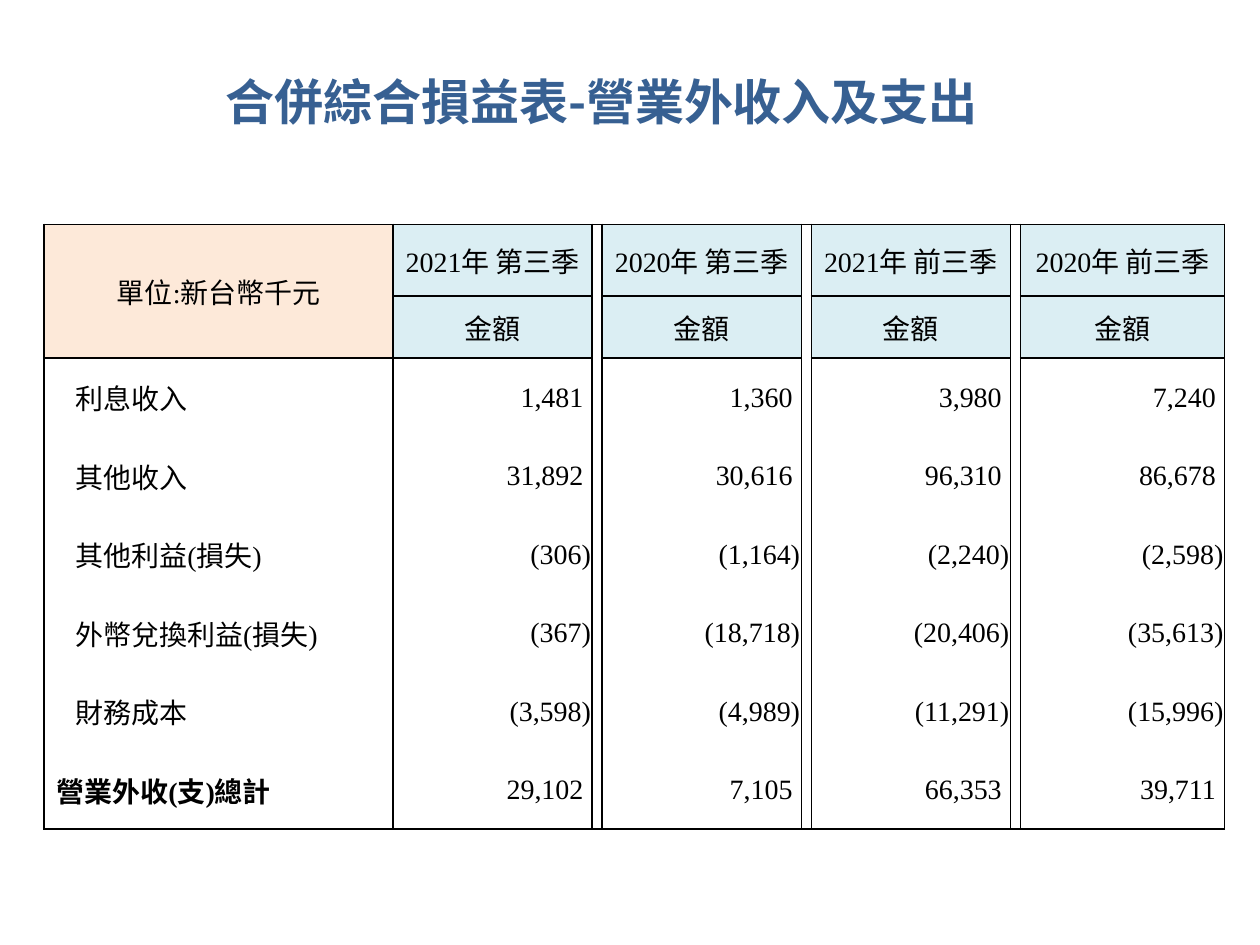
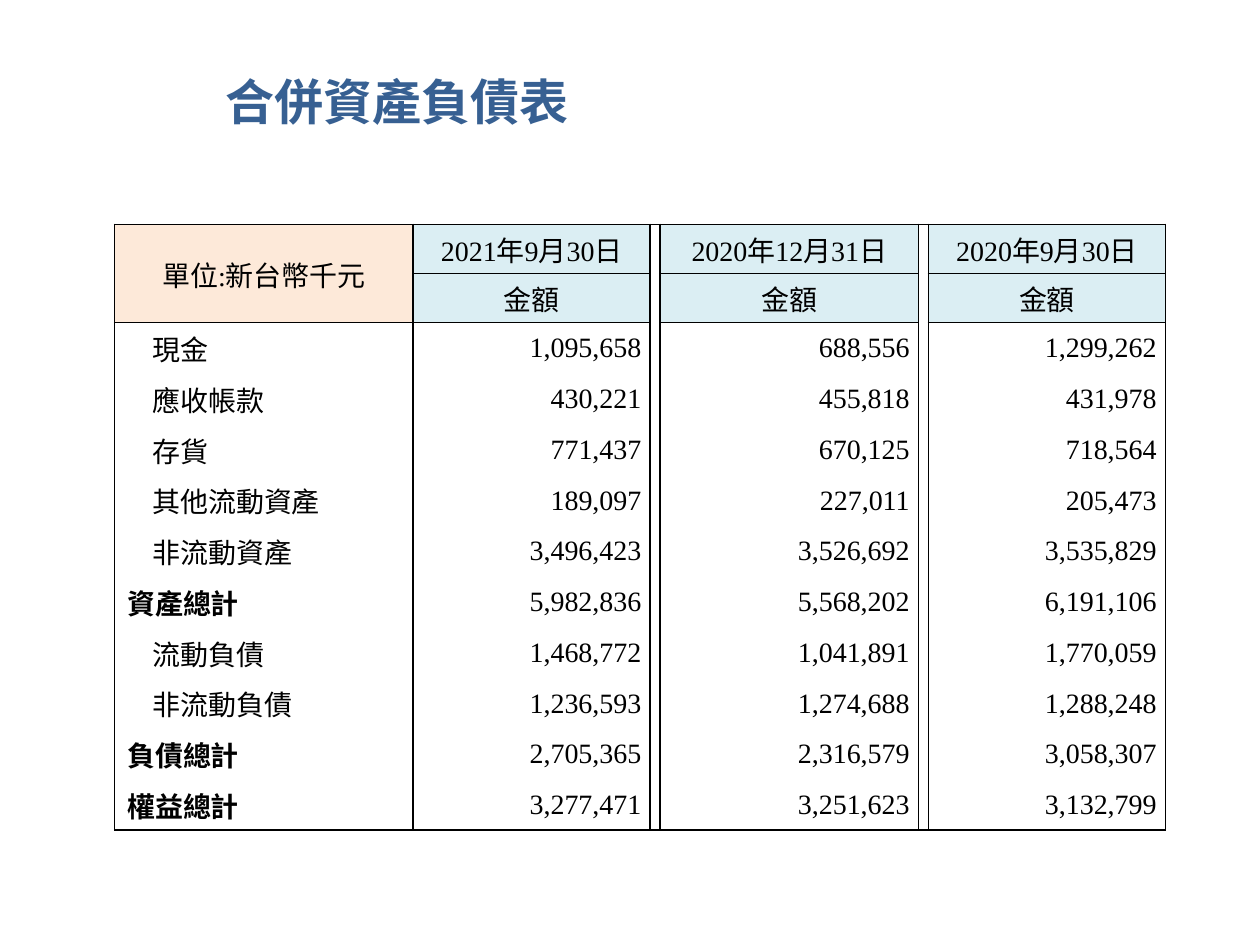
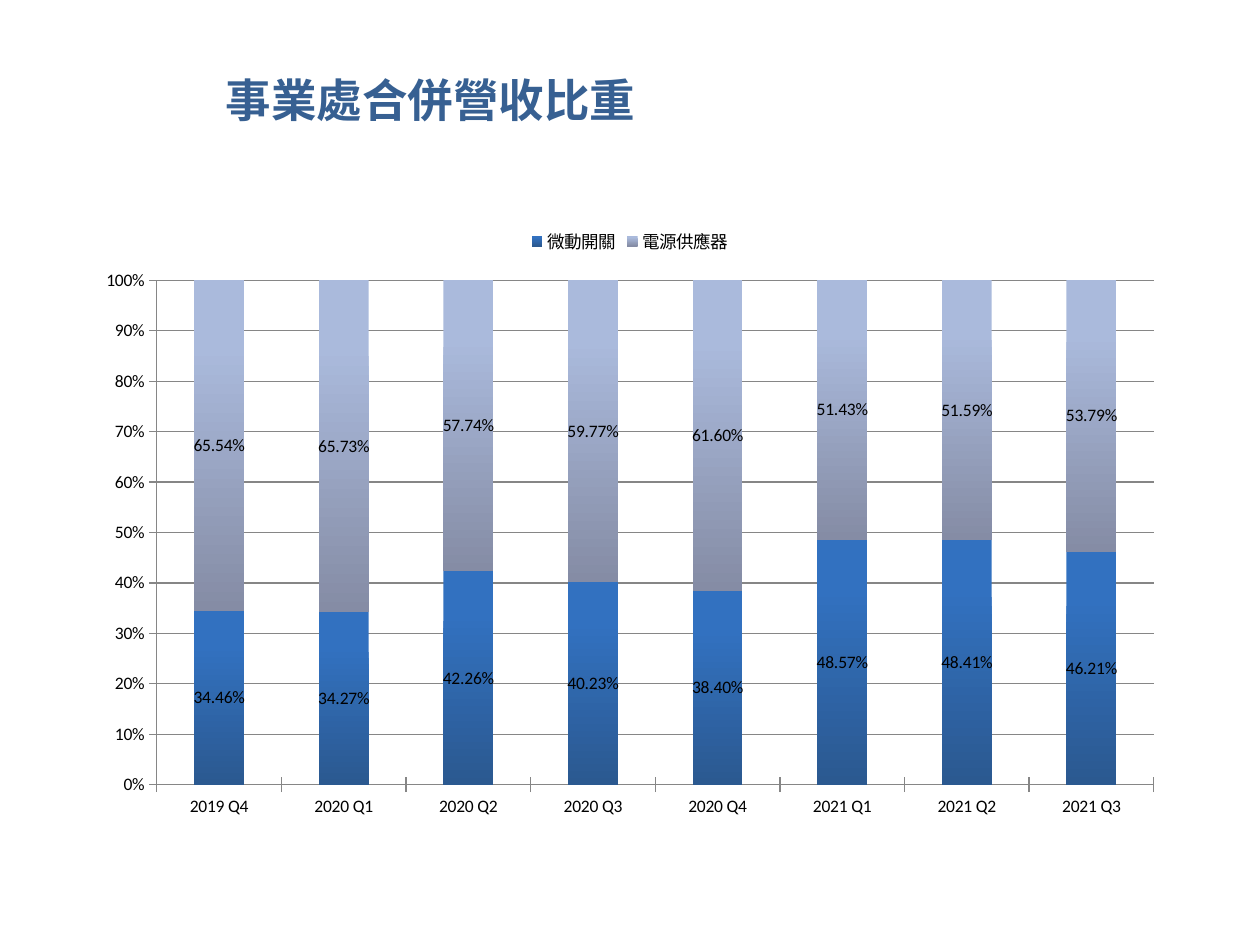
from lxml.etree import SubElement
from pptx import Presentation
from pptx.chart.data import CategoryChartData
from pptx.dml.color import RGBColor
from pptx.enum.chart import XL_CHART_TYPE, XL_LEGEND_POSITION, XL_TICK_MARK
from pptx.enum.text import MSO_ANCHOR, MSO_AUTO_SIZE, PP_ALIGN
from pptx.oxml.ns import qn
from pptx.util import Inches, Pt

TITLE_BLUE = RGBColor(0x37, 0x60, 0x92)
BLACK = RGBColor(0, 0, 0)
GRID_GRAY = RGBColor(0x86, 0x86, 0x86)
UNIT_FILL = RGBColor(0xFD, 0xE9, 0xD9)
HEADER_FILL = RGBColor(0xDB, 0xEE, 0xF3)
SERIES_GRADIENTS = [
    (RGBColor(0x32, 0x71, 0xC0), RGBColor(0x2B, 0x59, 0x90)),
    (RGBColor(0xAA, 0xBA, 0xDC), RGBColor(0x85, 0x8C, 0xA5)),
]

SERIF = "Times New Roman"
SANS = "Noto Sans CJK SC"
CHART_FONT = "Calibri"

UNIT = "單位:新台幣千元"
AMOUNT = "金額"
GAP_WIDTH = 0.08
HEADER_ROWS = 2
CELL_INSET = 0.01
TOTAL_INDENT = 0.1
DIGIT_INSET = 0.07  # lines digits up with those inside closing brackets

INCOME = {
    "place": (0.35, 1.78, 4.8),
    "label_width": 2.77,
    "value_widths": [1.58, 1.58, 1.58, 1.62],
    "header_heights": [0.57, 0.49],
    "indent": 0.25,
    "periods": ["2021年 第三季", "2020年 第三季", "2021年 前三季", "2020年 前三季"],
    "rows": [
        ("利息收入", "1,481", "1,360", "3,980", "7,240"),
        ("其他收入", "31,892", "30,616", "96,310", "86,678"),
        ("其他利益(損失)", "(306)", "(1,164)", "(2,240)", "(2,598)"),
        ("外幣兌換利益(損失)", "(367)", "(18,718)", "(20,406)", "(35,613)"),
        ("財務成本", "(3,598)", "(4,989)", "(11,291)", "(15,996)"),
        ("營業外收(支)總計", "29,102", "7,105", "66,353", "39,711"),
    ],
}
BALANCE = {
    "place": (0.91, 1.78, 4.81),
    "label_width": 2.37,
    "value_widths": [1.88, 2.05, 1.88],
    "header_heights": [0.39, 0.39],
    "indent": 0.3,
    "periods": ["2021年9月30日", "2020年12月31日", "2020年9月30日"],
    "rows": [
        ("現金", "1,095,658", "688,556", "1,299,262"),
        ("應收帳款", "430,221", "455,818", "431,978"),
        ("存貨", "771,437", "670,125", "718,564"),
        ("其他流動資產", "189,097", "227,011", "205,473"),
        ("非流動資產", "3,496,423", "3,526,692", "3,535,829"),
        ("資產總計", "5,982,836", "5,568,202", "6,191,106"),
        ("流動負債", "1,468,772", "1,041,891", "1,770,059"),
        ("非流動負債", "1,236,593", "1,274,688", "1,288,248"),
        ("負債總計", "2,705,365", "2,316,579", "3,058,307"),
        ("權益總計", "3,277,471", "3,251,623", "3,132,799"),
    ],
}
QUARTERS = ["2019 Q4", "2020 Q1", "2020 Q2", "2020 Q3",
            "2020 Q4", "2021 Q1", "2021 Q2", "2021 Q3"]
REVENUE_SHARES = {
    "微動開關": [0.3446, 0.3427, 0.4226, 0.4023, 0.384, 0.4857, 0.4841, 0.4621],
    "電源供應器": [0.6554, 0.6573, 0.5774, 0.5977, 0.616, 0.5143, 0.5159, 0.5379],
}


def set_font(font, name, size, color=BLACK, bold=False):
    font.name = name
    font.size = Pt(size)
    font.color.rgb = color
    font.bold = bold


def add_page(deck, text, width, height, font_name=SERIF, size=28):
    page = deck.slides.add_slide(deck.slide_layouts[5])
    title = page.shapes.title
    title.left, title.top = Inches(1.69), Inches(0.52)
    title.width, title.height = Inches(width), Inches(height)
    frame = title.text_frame
    frame.text = text
    frame.word_wrap = True
    frame.auto_size = MSO_AUTO_SIZE.NONE
    frame.vertical_anchor = MSO_ANCHOR.TOP
    para = frame.paragraphs[0]
    para.alignment = PP_ALIGN.LEFT
    set_font(para.font, font_name, size, TITLE_BLUE, True)
    return page


def set_borders(cell, sides):
    """Draw black lines on the given sides (of "LRTB") and none on the others."""
    properties = cell._tc.get_or_add_tcPr()
    for side in "LRTB":
        line = SubElement(properties, qn(f"a:ln{side}"), w=str(Pt(1)))
        if side in sides:
            fill = SubElement(line, qn("a:solidFill"))
            SubElement(fill, qn("a:srgbClr"), val=str(BLACK))
        else:
            SubElement(line, qn("a:noFill"))


def write_cell(cell, text, alignment, bold=False, left=CELL_INSET, right=CELL_INSET):
    cell.text = text
    cell.vertical_anchor = MSO_ANCHOR.MIDDLE
    cell.margin_left, cell.margin_right = Inches(left), Inches(right)
    cell.margin_top, cell.margin_bottom = Inches(CELL_INSET), 0
    para = cell.text_frame.paragraphs[0]
    para.alignment = alignment
    set_font(para.font, SERIF, 16, bold=bold)


def style_grid(table):
    """Rule and fill every cell; even columns after the first are narrow gaps."""
    last_row = len(table.rows) - 1
    for row in range(last_row + 1):
        for column in range(len(table.columns)):
            cell = table.cell(row, column)
            is_gap = column > 0 and column % 2 == 0
            is_header = row < HEADER_ROWS and not is_gap
            sides = "LR"
            if is_header or row == (0 if is_gap else HEADER_ROWS):
                sides += "T"
            if is_header or row == last_row:
                sides += "B"
            set_borders(cell, sides)
            if is_header:
                cell.fill.solid()
                cell.fill.fore_color.rgb = HEADER_FILL if column else UNIT_FILL
            else:
                cell.fill.background()
            if is_gap:
                write_cell(cell, "", PP_ALIGN.CENTER)


def add_statement(page, statement):
    left, top, height = statement["place"]
    rows = statement["rows"]
    widths = [statement["label_width"]]
    for value_width in statement["value_widths"]:
        widths += [value_width, GAP_WIDTH]
    widths.pop()
    header_heights = statement["header_heights"]
    body_height = (height - sum(header_heights)) / len(rows)
    heights = header_heights + [body_height] * len(rows)

    table = page.shapes.add_table(
        len(heights), len(widths), Inches(left), Inches(top),
        Inches(sum(widths)), Inches(height)).table
    table.first_row = table.horz_banding = False
    for column, width in zip(table.columns, widths):
        column.width = Inches(width)
    for row, row_height in zip(table.rows, heights):
        row.height = Inches(row_height)
    style_grid(table)

    table.cell(0, 0).merge(table.cell(1, 0))
    write_cell(table.cell(0, 0), UNIT, PP_ALIGN.CENTER)
    for index, period in enumerate(statement["periods"]):
        write_cell(table.cell(0, 2 * index + 1), period, PP_ALIGN.CENTER)
        write_cell(table.cell(1, 2 * index + 1), AMOUNT, PP_ALIGN.CENTER)
    for row, (label, *amounts) in enumerate(rows, HEADER_ROWS):
        is_total = label.endswith("總計")
        write_cell(table.cell(row, 0), label, PP_ALIGN.LEFT, is_total,
                   left=TOTAL_INDENT if is_total else statement["indent"])
        for index, amount in enumerate(amounts):
            inset = CELL_INSET if amount.endswith(")") else DIGIT_INSET
            write_cell(table.cell(row, 2 * index + 1), amount, PP_ALIGN.RIGHT,
                       right=inset)


def add_share_chart(page):
    data = CategoryChartData(number_format="0.00%")
    data.categories = QUARTERS
    for name, shares in REVENUE_SHARES.items():
        data.add_series(name, shares)
    chart = page.shapes.add_chart(
        XL_CHART_TYPE.COLUMN_STACKED, Inches(0.67), Inches(1.7),
        Inches(8.66), Inches(4.88), data).chart
    set_font(chart.font, CHART_FONT, 10)
    chart.has_title = False
    chart.has_legend = True
    chart.legend.position = XL_LEGEND_POSITION.TOP
    chart.legend.include_in_layout = False
    set_font(chart.legend.font, SANS, 10)

    for axis in (chart.category_axis, chart.value_axis):
        axis.major_tick_mark = XL_TICK_MARK.CROSS
        axis.format.line.color.rgb = GRID_GRAY
    value_axis = chart.value_axis
    value_axis.minimum_scale, value_axis.maximum_scale = 0, 1
    value_axis.major_unit = 0.1
    value_axis.tick_labels.number_format = "0%"
    value_axis.tick_labels.number_format_is_linked = False
    value_axis.major_gridlines.format.line.color.rgb = GRID_GRAY

    plot = chart.plots[0]
    plot.gap_width, plot.overlap = 150, 100
    plot.vary_by_categories = False
    for series, colors in zip(plot.series, SERIES_GRADIENTS):
        fill = series.format.fill
        fill.gradient()
        fill.gradient_angle = 270
        for stop, color, position in zip(fill.gradient_stops, colors, (0.2, 1)):
            stop.color.rgb = color
            stop.position = position
        labels = series.data_labels
        labels.show_value = True
        labels.number_format = "0.00%"
        labels.number_format_is_linked = False
        set_font(labels.font, CHART_FONT, 10)


def main():
    deck = Presentation()
    deck.slide_width, deck.slide_height = Inches(10), Inches(7.5)
    add_statement(add_page(deck, "合併綜合損益表-營業外收入及支出", 8.11, 0.57, SANS), INCOME)
    add_statement(add_page(deck, "合併資產負債表", 6.69, 0.91), BALANCE)
    add_share_chart(add_page(deck, "事業處合併營收比重", 7.56, 0.54, size=26))
    deck.save("out.pptx")


if __name__ == "__main__":
    main()
